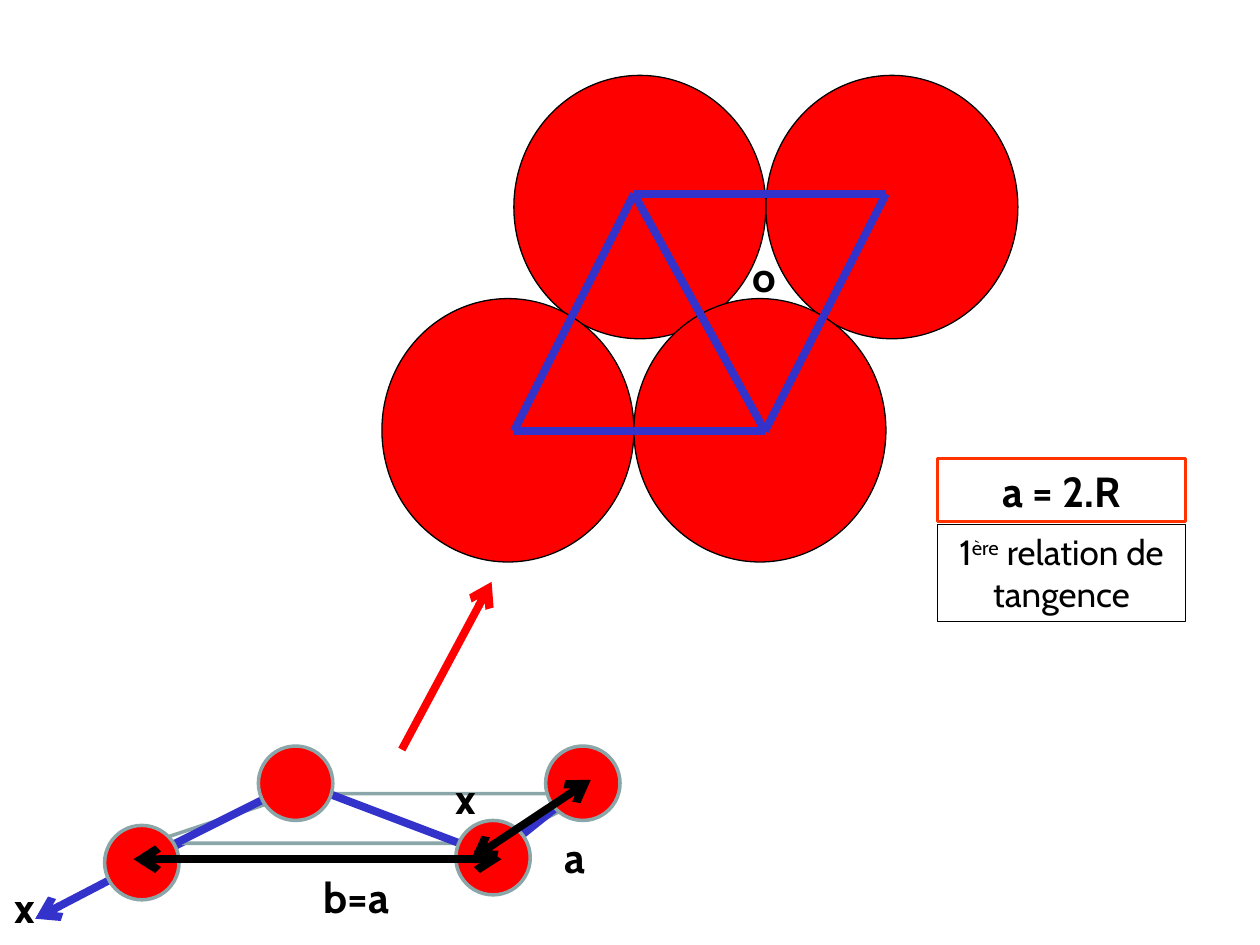
from lxml import etree
from pptx import Presentation
from pptx.dml.color import RGBColor
from pptx.enum.shapes import MSO_CONNECTOR, MSO_SHAPE
from pptx.enum.text import MSO_ANCHOR, PP_ALIGN
from pptx.oxml.ns import qn
from pptx.util import Cm, Pt

BLACK = RGBColor(0x00, 0x00, 0x00)
WHITE = RGBColor(0xFF, 0xFF, 0xFF)
RED = RGBColor(0xFF, 0x00, 0x00)
ORANGE = RGBColor(0xFF, 0x33, 0x00)
BLUE = RGBColor(0x33, 0x33, 0xCC)
GREY = RGBColor(0x8A, 0xA6, 0xA8)

FONT = "Cabin"
THICK = 4.5
ATOM_SIZE = 1.5
SPHERE_WIDTH, SPHERE_HEIGHT = 5.08, 5.31
LABEL_WIDTH, LABEL_HEIGHT = 0.99, 1.27


def style_shape(shape, fill, line=None, line_width=0.75):
    shape.shadow.inherit = False
    if fill is None:
        shape.fill.background()
    else:
        shape.fill.solid()
        shape.fill.fore_color.rgb = fill
    if line is None:
        shape.line.fill.background()
    else:
        shape.line.color.rgb = line
        shape.line.width = Pt(line_width)


def add_circle(slide, left, top, width, height, line, line_width):
    shape = slide.shapes.add_shape(
        MSO_SHAPE.OVAL, Cm(left), Cm(top), Cm(width), Cm(height))
    style_shape(shape, RED, line, line_width)


def add_line(slide, start, end, color, head=False, tail=False):
    """Draw a thick line; head and tail put an arrow at start and end."""
    connector = slide.shapes.add_connector(
        MSO_CONNECTOR.STRAIGHT, *(Cm(value) for value in (*start, *end)))
    connector.line.color.rgb = color
    connector.line.width = Pt(THICK)
    line = connector.line._get_or_add_ln()
    for tag, wanted in (("a:headEnd", head), ("a:tailEnd", tail)):
        if wanted:
            etree.SubElement(line, qn(tag)).set("type", "arrow")
    etree.SubElement(connector._element.spPr, qn("a:effectLst"))


def add_text(slide, text, left, top, width=LABEL_WIDTH, height=LABEL_HEIGHT, *,
             size=24, bold=True, fill=WHITE, line=None, line_width=0.75,
             superscript=""):
    """Add a centred text box; superscript is the part of text to raise."""
    shape = slide.shapes.add_textbox(Cm(left), Cm(top), Cm(width), Cm(height))
    style_shape(shape, fill, line, line_width)
    frame = shape.text_frame
    frame.word_wrap = True
    frame.vertical_anchor = MSO_ANCHOR.MIDDLE
    frame.margin_left = frame.margin_right = Cm(0.1)
    paragraph = frame.paragraphs[0]
    paragraph.alignment = PP_ALIGN.CENTER
    parts = text.partition(superscript) if superscript else (text,)
    for part in parts:
        run = paragraph.add_run()
        run.text = part
        run.font.name = FONT
        run.font.size = Pt(size)
        run.font.bold = bold
        run.font.color.rgb = BLACK
        if superscript and part == superscript:
            run._r.get_or_add_rPr().set("baseline", "30000")


def add_outline(slide, points):
    builder = slide.shapes.build_freeform(*points[0], scale=Cm(1))
    builder.add_line_segments(points[1:], close=True)
    style_shape(builder.convert_to_shape(), WHITE, GREY, 2)


def add_base_plane(slide):
    """Perspective view of the rhombic base with its four atoms."""
    back, front = 15.72, 17.32
    add_text(slide, "x", -0.1, 17.65, 1.19)
    add_line(slide, (5.69, 15.93), (0.71, 18.52), BLUE, tail=True)
    add_outline(slide, [(5.89, back), (3.1, front), (9.91, front), (11.91, back)])
    for start_x, end_x in ((5.89, 10.11), (6.1, 2.9), (11.91, 9.91)):
        add_line(slide, (start_x, back), (end_x, front), BLUE)
    for left, top in ((11, 15.04), (5.21, 15.04), (9.19, 16.54), (2.11, 16.64)):
        add_circle(slide, left, top, ATOM_SIZE, ATOM_SIZE, GREY, 2)
    add_line(slide, (2.69, front), (10.11, front), BLACK, head=True, tail=True)
    add_text(slide, "b=a", 5.89, 17.45, 2.59)
    add_line(slide, (9.5, front), (11.91, back), BLACK, head=True, tail=True)
    add_text(slide, "a", 11.1, 16.64)
    add_line(slide, (8.1, 15.11), (9.91, 11.73), RED, tail=True)
    add_text(slide, "x", 8.89, 15.44, fill=None)


def add_tangent_spheres(slide):
    """Top view of four touching spheres and the rhombus of their centres."""
    add_text(slide, "o", 14.91, 4.93)
    for row_left, top in ((10.36, 1.52), (7.7, 6.02)):
        for column in range(2):
            add_circle(slide, row_left + column * SPHERE_WIDTH, top,
                       SPHERE_WIDTH, SPHERE_HEIGHT, BLACK, 0.75)
    top_left, top_right = (12.78, 3.91), (17.86, 3.91)
    bottom_left, bottom_right = (10.36, 8.69), (15.42, 8.69)
    for start, end in ((bottom_right, top_left), (bottom_left, top_left),
                       (bottom_right, bottom_left), (top_right, top_left),
                       (bottom_right, top_right)):
        add_line(slide, start, end, BLUE)


def add_relation(slide):
    left, width = 18.9, 5
    add_text(slide, "a = 2.R", left, 9.25, width, line=ORANGE, line_width=1.5)
    add_text(slide, "1ère relation de tangence", left, 10.57, width, 1.96,
             size=20, bold=False, line=BLACK, superscript="ère")


def main():
    presentation = Presentation()
    presentation.slide_width = Cm(25.4)
    presentation.slide_height = Cm(19.05)
    slide = presentation.slides.add_slide(presentation.slide_layouts[6])
    add_base_plane(slide)
    add_tangent_spheres(slide)
    add_relation(slide)
    presentation.save("out.pptx")


if __name__ == "__main__":
    main()
